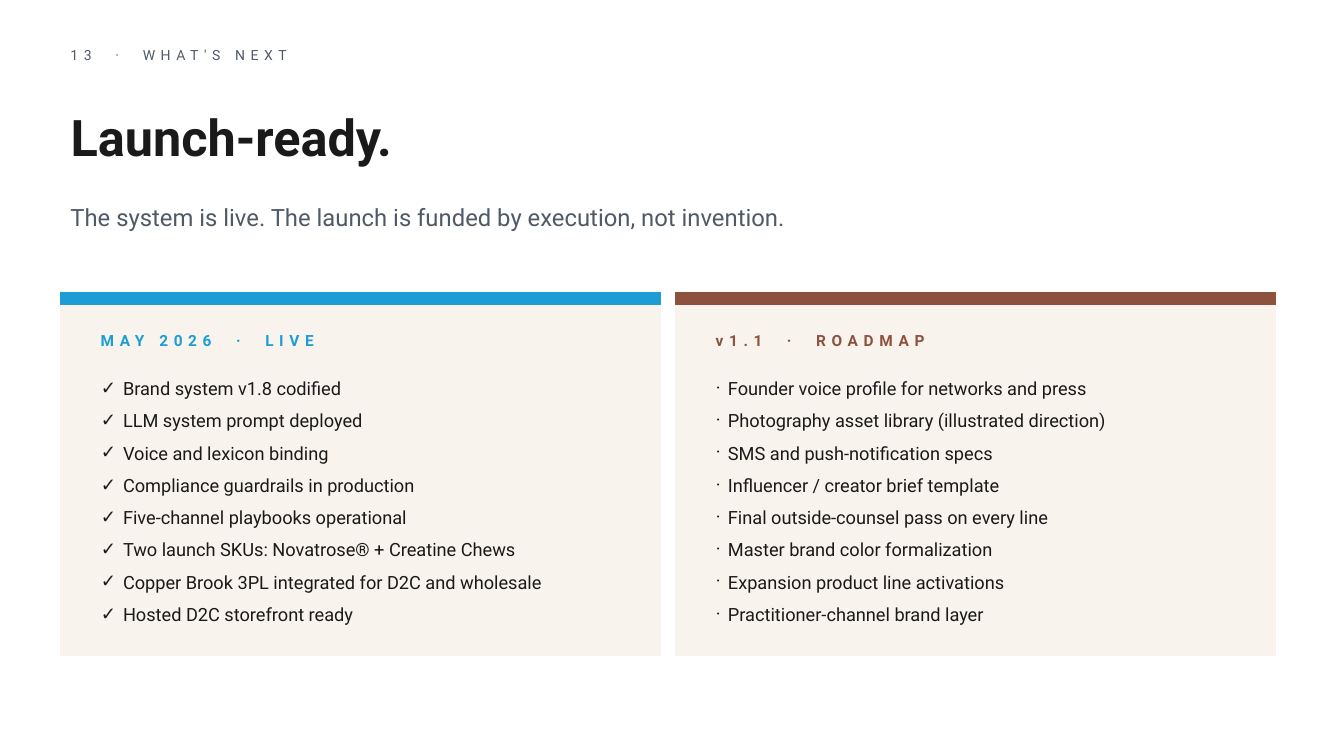
from pptx import Presentation
from pptx.dml.color import RGBColor as Rgb
from pptx.enum.shapes import MSO_SHAPE as Shape
from pptx.enum.text import MSO_ANCHOR as Anchor, MSO_AUTO_SIZE as Fit, PP_ALIGN as Align
from pptx.oxml.ns import qn
from pptx.util import Inches as In, Pt
from lxml.etree import SubElement as Sub

theme = {
    "font": "Roboto",
    "ink": "1A1A1A", "gray": "4F5A66", "sand": "F8F4ED",
    "blue": "1D9DD4", "clay": "8D523E",
    "tag": 10, "title": 36, "lead": 17, "label": 11, "item": 13,
    "track": 4,
}

# Page grid, in inches
left, wide = 0.6, 12
top, tall, bar = 2.9, 3.6, 0.12
card, step = 5.95, 6.1
pad, pitch = 0.3, 0.32

cards = [
    ("MAY 2026 · LIVE", "blue", "✓", 0.22, [
        "Brand system v1.8 codified",
        "LLM system prompt deployed",
        "Voice and lexicon binding",
        "Compliance guardrails in production",
        "Five-channel playbooks operational",
        "Two launch SKUs: Novatrose® + Creatine Chews",
        "Copper Brook 3PL integrated for D2C and wholesale",
        "Hosted D2C storefront ready",
    ]),
    ("v1.1 · ROADMAP", "clay", "·", 0.12, [
        "Founder voice profile for networks and press",
        "Photography asset library (illustrated direction)",
        "SMS and push-notification specs",
        "Influencer / creator brief template",
        "Final outside-counsel pass on every line",
        "Master brand color formalization",
        "Expansion product line activations",
        "Practitioner-channel brand layer",
    ]),
]


def style(para, size, color, bold=False):
    para.alignment = Align.LEFT
    font = para.font
    font.name, font.size, font.bold = theme["font"], Pt(theme[size]), bold
    font.color.rgb = Rgb.from_string(theme[color])


def write(box, area, text, size, color, bold=False, track=False):
    box.left, box.top, box.width, box.height = map(In, area)
    frame = box.text_frame
    frame.word_wrap, frame.auto_size = True, Fit.NONE
    frame.vertical_anchor = Anchor.MIDDLE
    para = frame.paragraphs[0]
    style(para, size, color, bold)
    if not track:
        para.add_run().text = text
        return
    # Letterspaced line, with a wider gap on each side of the dot
    head, tail = text.split(" · ")
    gap = theme["track"] + theme[size] * 0.25 + theme["track"]
    for part, space in ((head, theme["track"]), (" ·", gap), (" " + tail, theme["track"])):
        run = para.add_run()
        run.text = part
        run._r.get_or_add_rPr().set("spc", str(round(space * 100)))


deck = Presentation()
deck.slide_width, deck.slide_height = In(13.33), In(7.5)
slide = deck.slides.add_slide(deck.slide_layouts[3])
shapes = slide.shapes
title, *lists = slide.placeholders

# Heading
tag = shapes.add_textbox(0, 0, 0, 0)
write(tag, (left, 0.4, wide, 0.3), "13 · WHAT'S NEXT", "tag", "gray", track=True)
write(title, (left, 0.85, wide, 1), "Launch-ready.", "title", "ink", bold=True)
lead = shapes.add_textbox(0, 0, 0, 0)
write(lead, (left, 1.9, wide, 0.5),
      "The system is live. The launch is funded by execution, not invention.", "lead", "gray")

# Cards
for col, (name, color, mark, hang, items) in enumerate(cards):
    x = left + col * step
    for high, tone in ((tall, "sand"), (bar, color)):
        rect = shapes.add_shape(Shape.RECTANGLE, In(x), In(top), In(card), In(high))
        rect.shadow.inherit = False
        rect.fill.solid()
        rect.fill.fore_color.rgb = rect.line.color.rgb = Rgb.from_string(theme[tone])
        rect.line.width = Pt(1)

    label = shapes.add_textbox(0, 0, 0, 0)
    write(label, (x + pad, top + pad, card - 2 * pad, 0.35), name, "label", color,
          bold=True, track=True)

    # Bulleted list, brought in front of its card
    body = lists[col]
    shapes._spTree.append(body._element)
    body.left, body.top = In(x + pad), In(3.64)
    body.width, body.height = In(card - 2 * pad), In(len(items) * pitch)
    frame = body.text_frame
    frame.word_wrap, frame.auto_size = True, Fit.NONE
    frame.vertical_anchor = Anchor.TOP
    frame.margin_top = frame.margin_bottom = 0
    for row, item in enumerate(items):
        para = frame.add_paragraph() if row else frame.paragraphs[0]
        para.space_before = para.space_after = Pt(0)
        para.line_spacing = Pt(pitch * 72)
        props = para._p.get_or_add_pPr()
        props.set("marL", str(In(hang)))
        props.set("indent", str(-In(hang)))
        Sub(props, qn("a:buFont")).set("typeface", theme["font"])
        Sub(props, qn("a:buChar")).set("char", mark)
        style(para, "item", "ink")
        para.add_run().text = item

deck.save("out.pptx")
